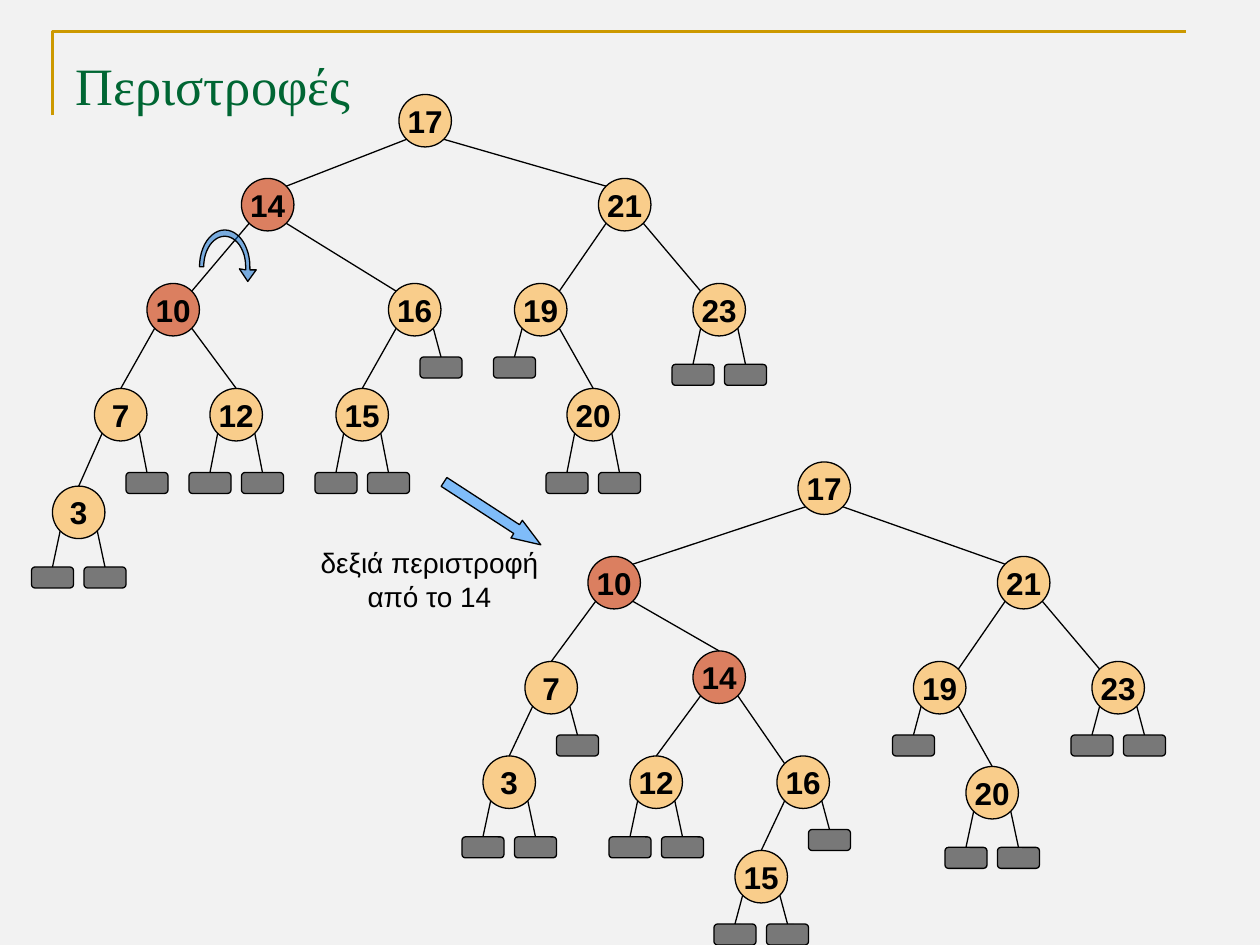
from dataclasses import dataclass
from math import cos, pi, sin, sqrt
from typing import Optional

from lxml import etree
from pptx import Presentation
from pptx import util as u
from pptx.dml.color import RGBColor
from pptx.enum import shapes, text
from pptx.oxml.ns import qn


@dataclass(frozen=True)
class Theme:
    background: str = "F2F2F2"
    ink: str = "000000"
    frame: str = "CC9900"
    title: str = "006633"
    node: str = "FFB547"
    rotated: str = "CC3300"
    arrow: str = "3399FF"
    turn: str = "0066CC"
    title_font: str = "Times New Roman"
    body_font: str = "Arial"
    title_size: int = 30
    key_size: int = 18
    caption_size: int = 16
    thin: float = 0.75
    thick: float = 1.5


@dataclass
class Node:
    key: int
    col: float
    row: float
    left: Optional["Node"] = None
    right: Optional["Node"] = None
    drop: float = 7
    top_joint: bool = False
    rotated: bool = False


T = Theme()
CELLS_PER_INCH = 12
NODE = 5
LEAF_W, LEAF_H = 4, 2
CORNER = NODE / 2 * (1 - 1 / sqrt(2))

BEFORE = Node(
    17, 38, 9,
    Node(14, 23, 17,
         Node(10, 14, 27,
              Node(7, 9, 37, Node(3, 5, 46.3, drop=7.7, top_joint=True), drop=8, top_joint=True),
              Node(12, 20, 37, drop=8, top_joint=True), rotated=True),
         Node(16, 37, 27, Node(15, 32, 37, drop=8, top_joint=True)), rotated=True),
    Node(21, 57, 17,
         Node(19, 49, 27, right=Node(20, 54, 37, drop=8, top_joint=True)),
         Node(23, 66, 27, drop=7.7)))

AFTER = Node(
    17, 76, 44,
    Node(10, 56, 53,
         Node(7, 50, 63, Node(3, 46, 72, drop=7.7, top_joint=True), top_joint=True),
         Node(14, 66, 62,
              Node(12, 60, 72, drop=7.7, top_joint=True),
              Node(16, 74, 72, Node(15, 70, 81, top_joint=True)),
              top_joint=True, rotated=True), rotated=True),
    Node(21, 95, 53,
         Node(19, 87, 63, right=Node(20, 92, 73, drop=7.7, top_joint=True)),
         Node(23, 104, 63)))


def cells(*values):
    return [u.Inches(v / CELLS_PER_INCH) for v in values]


def rgb(color):
    return RGBColor.from_string(color)


def paint(sp, color, opacity, line=T.ink, width=T.thin):
    sp.shadow.inherit = False
    sp.line.color.rgb = rgb(line)
    sp.line.width = u.Pt(width)
    if color is None:
        sp.fill.background()
        return
    sp.fill.solid()
    sp.fill.fore_color.rgb = rgb(color)
    clr = sp.fill._xPr.find(qn("a:solidFill"))[0]
    etree.SubElement(clr, qn("a:alpha"), val=str(opacity * 1000))


def add_preset(s, kind, box, color, opacity):
    sp = s.shapes.add_shape(kind, *cells(*box))
    paint(sp, color, opacity)
    return sp


def add_outline(s, points, closed, **look):
    builder = s.shapes.build_freeform(*cells(*points[0]))
    builder.add_line_segments([cells(*pt) for pt in points[1:]], close=closed)
    paint(builder.convert_to_shape(), **look)


def write(tf, lines, font, size, color, bold=False, align=text.PP_ALIGN.CENTER):
    tf.word_wrap = False
    for i, line in enumerate(lines):
        p = tf.paragraphs[0] if i == 0 else tf.add_paragraph()
        p.text = line
        p.alignment = align
        p.font.name = font
        p.font.size = u.Pt(size)
        p.font.bold = bold
        p.font.color.rgb = rgb(color)


def add_edge(s, parent, side, child, child_shape, top_joint):
    x = parent.col + (CORNER if side < 0 else NODE - CORNER)
    y = parent.row + NODE - CORNER
    if top_joint:
        end = (x, y)
    else:
        end = (child.col + (NODE - CORNER if side < 0 else CORNER), child.row + CORNER)
    c = s.shapes.add_connector(shapes.MSO_CONNECTOR.STRAIGHT, *cells(x, y, *end))
    if top_joint:
        c.end_connect(child_shape, 0)
    c.line.color.rgb = rgb(T.ink)
    c.line.width = u.Pt(T.thin)
    etree.SubElement(c._element.spPr, qn("a:effectLst"))


def add_leaf(s, node, side):
    col = node.col + (-2 if side < 0 else 3)
    return add_preset(s, shapes.MSO_SHAPE.ROUNDED_RECTANGLE,
                      (col, node.row + node.drop, LEAF_W, LEAF_H), T.ink, 50)


def add_tree(s, node):
    sp = add_preset(s, shapes.MSO_SHAPE.OVAL, (node.col, node.row, NODE, NODE),
                    T.rotated if node.rotated else T.node, 60)
    sp.text_frame.vertical_anchor = text.MSO_ANCHOR.MIDDLE
    write(sp.text_frame, [str(node.key)], T.body_font, T.key_size, T.ink, bold=True)
    for side, child in ((-1, node.left), (1, node.right)):
        child_shape = add_tree(s, child) if child else add_leaf(s, node, side)
        add_edge(s, node, side, child, child_shape, child is None or child.top_joint)
    return sp


def add_title(s, title):
    add_outline(s, [(5, 11), (5, 3), (113, 3)], False,
                color=None, opacity=0, line=T.frame, width=T.thick)
    tf = s.shapes.add_textbox(*cells(6, 3.6, 108, 6.4)).text_frame
    tf.margin_top = u.Inches(0.12)
    write(tf, [title], T.title_font, T.title_size, T.title, align=text.PP_ALIGN.LEFT)
    tf.word_wrap = True


def arc(cx, cy, rx, ry, steps=24):
    angles = [pi * i / steps for i in range(steps + 1)]
    return [(cx + rx * cos(a), cy - ry * sin(a)) for a in angles]


def add_turn_arrow(s):
    inner = arc(21.4, 25.4, 2, 2.9)
    outer = arc(21.4, 25.4, 2.4, 3.5)[::-1]
    head = [(23.8, 25.7), (24.4, 25.7), (23.6, 26.8), (22.8, 25.6), (23.4, 25.7)]
    add_outline(s, inner + outer + head, True, color=T.turn, opacity=50)


def add_step_arrow(s, lines):
    sp = add_preset(s, shapes.MSO_SHAPE.RIGHT_ARROW, (41.4, 47.9, 11, 2), T.arrow, 60)
    sp.adjustments[0], sp.adjustments[1] = 0.5, 1.375
    sp.rotation = 33
    tf = s.shapes.add_textbox(*cells(29.3, 51.4, 23.2, 7.7)).text_frame
    write(tf, lines, T.body_font, T.caption_size, T.ink)


def main():
    prs = Presentation()
    prs.slide_width, prs.slide_height = u.Inches(10), u.Inches(7.5)
    s = prs.slides.add_slide(prs.slide_layouts[6])
    s.background.fill.solid()
    s.background.fill.fore_color.rgb = rgb(T.background)
    add_title(s, "Περιστροφές")
    for root in (BEFORE, AFTER):
        add_tree(s, root)
    add_step_arrow(s, ["δεξιά περιστροφή", "από το 14"])
    add_turn_arrow(s)
    prs.save("out.pptx")


if __name__ == "__main__":
    main()
